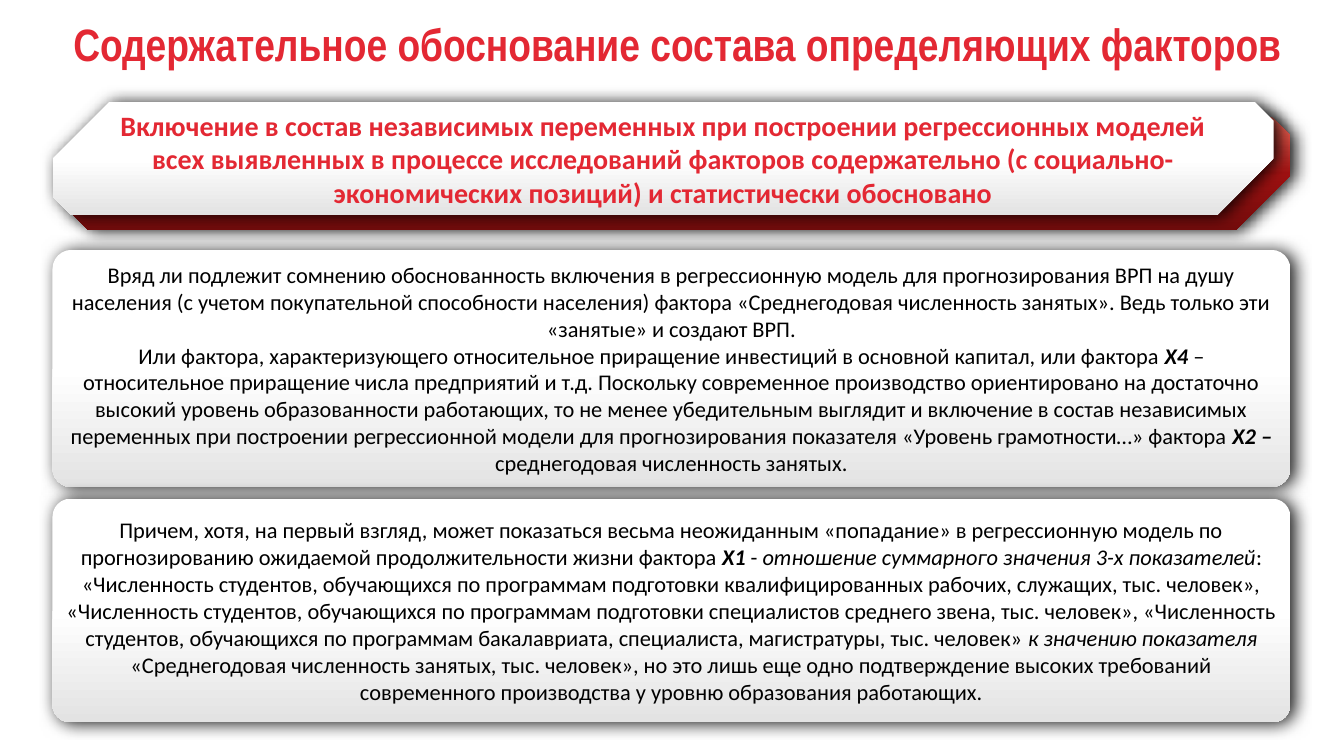
import copy

import pptx
import pptx.dml.color
import pptx.enum.shapes
import pptx.enum.text
import pptx.oxml
import pptx.oxml.ns
import pptx.util

PX = 9525
RED = pptx.dml.color.RGBColor(0xE3, 0x28, 0x33)
CORAL = pptx.dml.color.RGBColor(0xFA, 0x6C, 0x5C)
CRIMSON = pptx.dml.color.RGBColor(0x9F, 0x11, 0x11)
MAROON = pptx.dml.color.RGBColor(0x74, 0x0C, 0x0C)
BLACK = pptx.dml.color.RGBColor(0, 0, 0)
WHITE = pptx.dml.color.RGBColor(0xFF, 0xFF, 0xFF)
SILVER = pptx.dml.color.RGBColor(0xE3, 0xE3, 0xE3)
RED_FADE = (CORAL, CRIMSON, MAROON)
WHITE_FADE = (WHITE, WHITE, SILVER)
SNIPPED = pptx.enum.shapes.MSO_SHAPE.SNIP_2_DIAG_RECTANGLE
ROUNDED = pptx.enum.shapes.MSO_SHAPE.ROUNDED_RECTANGLE
NAMESPACE = pptx.oxml.ns.nsdecls("a")


def add_text(para, text, size=16, font="Calibri", color=BLACK, bold=False, italic=False, outline=0):
    para.alignment = pptx.enum.text.PP_ALIGN.CENTER
    span = para.add_run()
    span.text = text
    span.font.size = pptx.util.Pt(size)
    span.font.name = font
    span.font.color.rgb = color
    span.font.bold = bold
    span.font.italic = italic
    if outline:
        span.font._element.insert(0, pptx.oxml.parse_xml(
            f'<a:ln {NAMESPACE} w="{pptx.util.Pt(outline)}"><a:solidFill>'
            f'<a:srgbClr val="{MAROON}"/></a:solidFill></a:ln>'))


def add_panel(page, kind, bounds, corner, fade):
    panel = page.shapes.add_shape(kind, *(value * PX for value in bounds))
    panel.adjustments[0] = corner
    panel.line.fill.background()
    panel.fill.gradient()
    panel.fill.gradient_angle = 270
    stops = panel._element.spPr.find(".//" + pptx.oxml.ns.qn("a:gsLst"))
    stops.append(copy.deepcopy(stops[-1]))
    for stop, position, color in zip(panel.fill.gradient_stops, (0, 0.5, 1), fade):
        stop.position = position
        stop.color.rgb = color
    panel.shadow.inherit = False
    effects = panel._element.spPr.find(pptx.oxml.ns.qn("a:effectLst"))
    effects.append(pptx.oxml.parse_xml(
        f'<a:outerShdw {NAMESPACE} blurRad="{pptx.util.Pt(12)}" dist="{pptx.util.Pt(3)}" dir="0" '
        'algn="ctr" rotWithShape="0"><a:srgbClr val="000000"><a:alpha val="87000"/>'
        '</a:srgbClr></a:outerShdw>'))
    frame = panel.text_frame
    frame.word_wrap = True
    frame.vertical_anchor = pptx.enum.text.MSO_ANCHOR.MIDDLE
    frame.margin_left = frame.margin_right = frame.margin_top = frame.margin_bottom = 8 * PX
    return frame


deck = pptx.Presentation()
deck.slide_width = 1280 * PX
deck.slide_height = 720 * PX
page = deck.slides.add_slide(deck.slide_layouts[5])

title = page.shapes.title
title.left, title.top, title.width, title.height = 23 * PX, 14 * PX, 1245 * PX, 64 * PX
title.text_frame.word_wrap = True
title.text_frame.auto_size = pptx.enum.text.MSO_AUTO_SIZE.NONE
title.text_frame.vertical_anchor = pptx.enum.text.MSO_ANCHOR.MIDDLE
title_para = title.text_frame.paragraphs[0]
title_para.line_spacing = 0.8
add_text(title_para, "Содержательное обоснование состава определяющих факторов",
         size=32.4, font="Arial Narrow", color=RED, bold=True, outline=0.52)

add_panel(page, SNIPPED, (66, 111, 1163, 108), 0.48, RED_FADE)
banner = add_panel(page, SNIPPED, (50, 97, 1163, 108), 0.5, WHITE_FADE)
banner_lines = [
    "Включение в состав независимых переменных при построении регрессионных моделей",
    "всех выявленных в процессе исследований факторов содержательно (с социально-экономических позиций) "
    "и статистически обосновано",
]
for index, line in enumerate(banner_lines):
    para = banner.add_paragraph() if index else banner.paragraphs[0]
    add_text(para, line, size=20, color=RED, bold=True, outline=0.75)

PLAIN = {}
ITALIC = {"italic": True}
FACTOR = {"bold": True, "italic": True}
panels = [
    ((50, 238, 1179, 226), [
        [("Вряд ли подлежит сомнению обоснованность включения в регрессионную модель для прогнозирования ВРП "
          "на душу населения (с учетом покупательной способности населения) фактора «Среднегодовая численность "
          "занятых». Ведь только эти «занятые» и создают ВРП.", PLAIN)],
        [("Или фактора, характеризующего относительное приращение инвестиций в основной капитал, "
          "или фактора ", PLAIN),
         ("X4 ", FACTOR),
         ("– относительное приращение числа предприятий и т.д. Поскольку современное производство "
          "ориентировано на достаточно высокий уровень образованности работающих, то не менее убедительным "
          "выглядит и включение в состав независимых переменных при построении регрессионной модели для "
          "прогнозирования показателя «Уровень грамотности…» фактора ", PLAIN),
         ("X2 – ", FACTOR),
         ("среднегодовая численность занятых.", PLAIN)],
    ]),
    ((50, 475, 1179, 213), [
        [("Причем, хотя, на первый взгляд, может показаться весьма неожиданным «попадание» в регрессионную "
          "модель по прогнозированию ожидаемой продолжительности жизни фактора ", PLAIN),
         ("X1", FACTOR),
         (" - ", PLAIN),
         ("отношение суммарного значения 3-х показателей", ITALIC),
         (": «Численность студентов, обучающихся по программам подготовки квалифицированных рабочих, служащих, "
          "тыс. человек», «Численность студентов, обучающихся по программам подготовки специалистов среднего "
          "звена, тыс. человек», «Численность студентов, обучающихся по программам бакалавриата, специалиста, "
          "магистратуры, тыс. человек» ", PLAIN),
         ("к значению показателя", ITALIC),
         (" «Среднегодовая численность занятых, тыс. человек», но это лишь еще одно подтверждение высоких "
          "требований современного производства у уровню образования работающих.", PLAIN)],
    ]),
]
for bounds, paragraphs in panels:
    frame = add_panel(page, ROUNDED, bounds, 0.08, WHITE_FADE)
    for index, pieces in enumerate(paragraphs):
        para = frame.add_paragraph() if index else frame.paragraphs[0]
        for text, style in pieces:
            add_text(para, text, **style)

deck.save("out.pptx")
